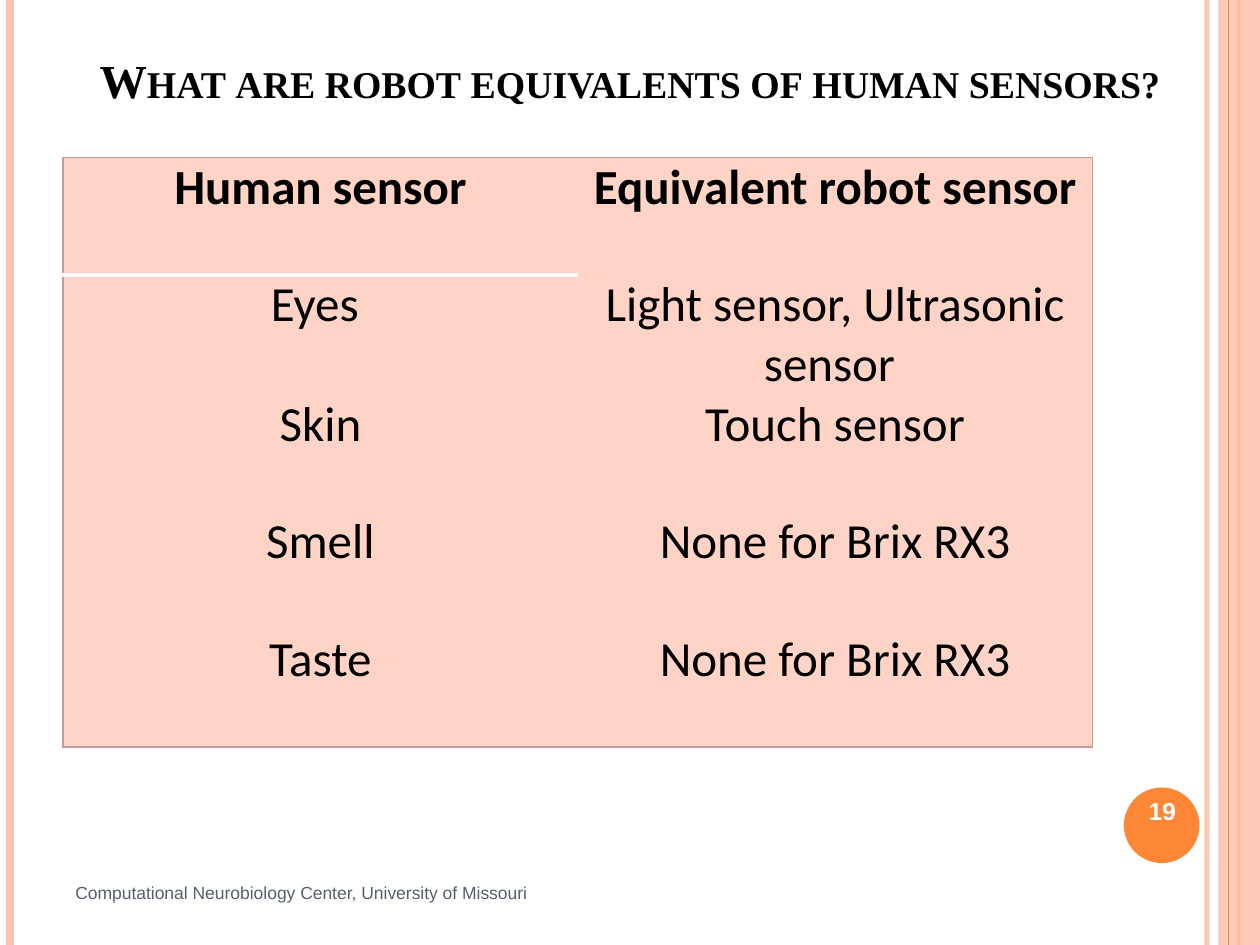
from dataclasses import dataclass
from typing import Optional

from lxml import etree
from pptx import Presentation
from pptx.dml.color import RGBColor
from pptx.enum.shapes import MSO_CONNECTOR, MSO_SHAPE
from pptx.enum.text import MSO_ANCHOR, MSO_AUTO_SIZE, PP_ALIGN
from pptx.oxml.ns import qn
from pptx.util import Inches, Pt

STRAIGHT = MSO_CONNECTOR.STRAIGHT
RECTANGLE, OVAL = MSO_SHAPE.RECTANGLE, MSO_SHAPE.OVAL
CENTER, LEFT = PP_ALIGN.CENTER, PP_ALIGN.LEFT
TOP, BOTTOM = MSO_ANCHOR.TOP, MSO_ANCHOR.BOTTOM
NO_AUTOFIT = MSO_AUTO_SIZE.NONE

PEACH = RGBColor(0xFE, 0xC3, 0xAE)
ORANGE = RGBColor(0xFE, 0x86, 0x37)
CELL_PINK = RGBColor(0xFF, 0xD4, 0xC7)
BORDER_ROSE = RGBColor(0xC4, 0x9C, 0x9B)
SLATE = RGBColor(0x57, 0x5F, 0x6D)
WHITE = RGBColor(0xFF, 0xFF, 0xFF)
BLACK = RGBColor(0, 0, 0)

SLIDE_WIDTH, SLIDE_HEIGHT = 10, 7.5
PLAIN_TABLE_STYLE = "{2D5ABB26-0587-4C30-8999-92F81FD0307C}"


@dataclass(frozen=True)
class Stripe:
    x: float
    color: RGBColor
    width: float
    opacity: Optional[int] = None


@dataclass(frozen=True)
class Panel:
    kind: int
    left: float
    top: float
    width: float
    height: float
    color: RGBColor
    opacity: Optional[int] = None


@dataclass(frozen=True)
class Label:
    text: str
    left: float
    top: float
    width: float
    height: float
    size: float
    color: RGBColor
    bold: bool
    align: int


@dataclass(frozen=True)
class SensorPair:
    human: str
    robot: str
    space_after: float = 0


EDGE_STRIPES = [
    Stripe(9.58, PEACH, 3, 93),
    Stripe(0.08, PEACH, 4.5),
    Stripe(9.83, ORANGE, 1.5),
]
SIDE_PANEL = Panel(RECTANGLE, 9.67, 0, 0.33, SLIDE_HEIGHT, PEACH, 87)
PANEL_STRIPE = Stripe(9.75, ORANGE, 0.75)
NUMBER_CIRCLE = Panel(OVAL, 8.92, 6.25, 0.6, 0.6, ORANGE)
LABELS = [
    Label("19", 8.89, 6.27, 0.67, 0.57, 14, WHITE, True, CENTER),
    Label("Computational Neurobiology Center, University of Missouri",
          0.5, 6.95, 9, 0.4, 10, SLATE, False, LEFT),
]
SENSOR_PAIRS = [
    SensorPair("Human sensor", "Equivalent robot sensor", 4),
    SensorPair("Eyes ", "Light sensor, Ultrasonic sensor ", 4),
    SensorPair("Skin", "Touch sensor", 4),
    SensorPair("Smell", "None for Brix RX3"),
    SensorPair("Taste", "None for Brix RX3"),
]


def set_opacity(parent, percent: Optional[int]) -> None:
    if percent is not None:
        color = next(parent.iter(qn("a:srgbClr")))
        etree.SubElement(color, qn("a:alpha"), val=str(percent * 1000))


def draw_stripe(slide, stripe: Stripe) -> None:
    x = Inches(stripe.x)
    connector = slide.shapes.add_connector(STRAIGHT, x, 0, x, Inches(SLIDE_HEIGHT))
    connector.line.color.rgb = stripe.color
    connector.line.width = Pt(stripe.width)
    properties = connector._element.spPr
    set_opacity(properties, stripe.opacity)
    etree.SubElement(properties, qn("a:effectLst"))


def draw_panel(slide, panel: Panel) -> None:
    shape = slide.shapes.add_shape(
        panel.kind, Inches(panel.left), Inches(panel.top),
        Inches(panel.width), Inches(panel.height))
    shape.shadow.inherit = False
    shape.fill.solid()
    shape.fill.fore_color.rgb = panel.color
    shape.line.fill.background()
    set_opacity(shape._element.spPr, panel.opacity)


def draw_label(slide, label: Label) -> None:
    box = slide.shapes.add_textbox(
        Inches(label.left), Inches(label.top),
        Inches(label.width), Inches(label.height))
    box.text_frame.word_wrap = True
    write_paragraph(box.text_frame, label.text, "Arial", label.size,
                    label.color, label.bold, label.align)


def write_paragraph(frame, text: str, font_name: str, size: float,
                    color: RGBColor, bold: bool, align: int):
    paragraph = frame.paragraphs[0]
    paragraph.text = text
    paragraph.alignment = align
    font = paragraph.font
    font.name, font.size, font.bold = font_name, Pt(size), bold
    font.color.rgb = color
    return paragraph


def draw_title(slide, text: str) -> None:
    title = slide.shapes.title
    title.left, title.top = Inches(0.5), Inches(0.33)
    title.width, title.height = Inches(9), Inches(0.58)
    frame = title.text_frame
    frame.word_wrap = True
    frame.auto_size = NO_AUTOFIT
    frame.vertical_anchor = BOTTOM
    paragraph = write_paragraph(frame, text, "Times New Roman", 27, BLACK, True, CENTER)
    paragraph.runs[0].font._element.set("cap", "small")


def add_border(cell, side: str, color: RGBColor, width: float) -> None:
    line = etree.SubElement(cell._tc.get_or_add_tcPr(), qn(f"a:ln{side}"),
                            w=str(Pt(width)))
    fill = etree.SubElement(line, qn("a:solidFill"))
    etree.SubElement(fill, qn("a:srgbClr"), val=str(color))


def draw_sensor_table(slide, pairs: list[SensorPair]) -> None:
    last_row = len(pairs) - 1
    frame = slide.shapes.add_table(
        len(pairs), 2, Inches(0.5), Inches(1.25), Inches(8.17), Inches(4.66))
    table = frame.table
    table._tbl.tblPr.find(qn("a:tableStyleId")).text = PLAIN_TABLE_STYLE
    for row, pair in enumerate(pairs):
        for column, text in enumerate((pair.human, pair.robot)):
            cell = table.cell(row, column)
            cell.margin_left = cell.margin_right = Inches(0.07)
            cell.margin_top = cell.margin_bottom = 0
            cell.vertical_anchor = TOP
            paragraph = write_paragraph(cell.text_frame, text, "Calibri", 28,
                                        BLACK, row == 0, CENTER)
            paragraph.space_after = Pt(pair.space_after)
            add_border(cell, "L" if column == 0 else "R", BORDER_ROSE, 1)
            if row == 0:
                add_border(cell, "T", BORDER_ROSE, 1)
            if row == 0 and column == 0:
                add_border(cell, "B", WHITE, 2.75)
            if row == last_row:
                add_border(cell, "B", BORDER_ROSE, 1)
            cell.fill.solid()
            cell.fill.fore_color.rgb = CELL_PINK


def main() -> None:
    presentation = Presentation()
    presentation.slide_width = Inches(SLIDE_WIDTH)
    presentation.slide_height = Inches(SLIDE_HEIGHT)
    slide = presentation.slides.add_slide(presentation.slide_layouts[5])
    for stripe in EDGE_STRIPES:
        draw_stripe(slide, stripe)
    draw_panel(slide, SIDE_PANEL)
    draw_stripe(slide, PANEL_STRIPE)
    draw_panel(slide, NUMBER_CIRCLE)
    draw_title(slide, "What are robot equivalents of human sensors?")
    draw_sensor_table(slide, SENSOR_PAIRS)
    for label in LABELS:
        draw_label(slide, label)
    presentation.save("out.pptx")


if __name__ == "__main__":
    main()
